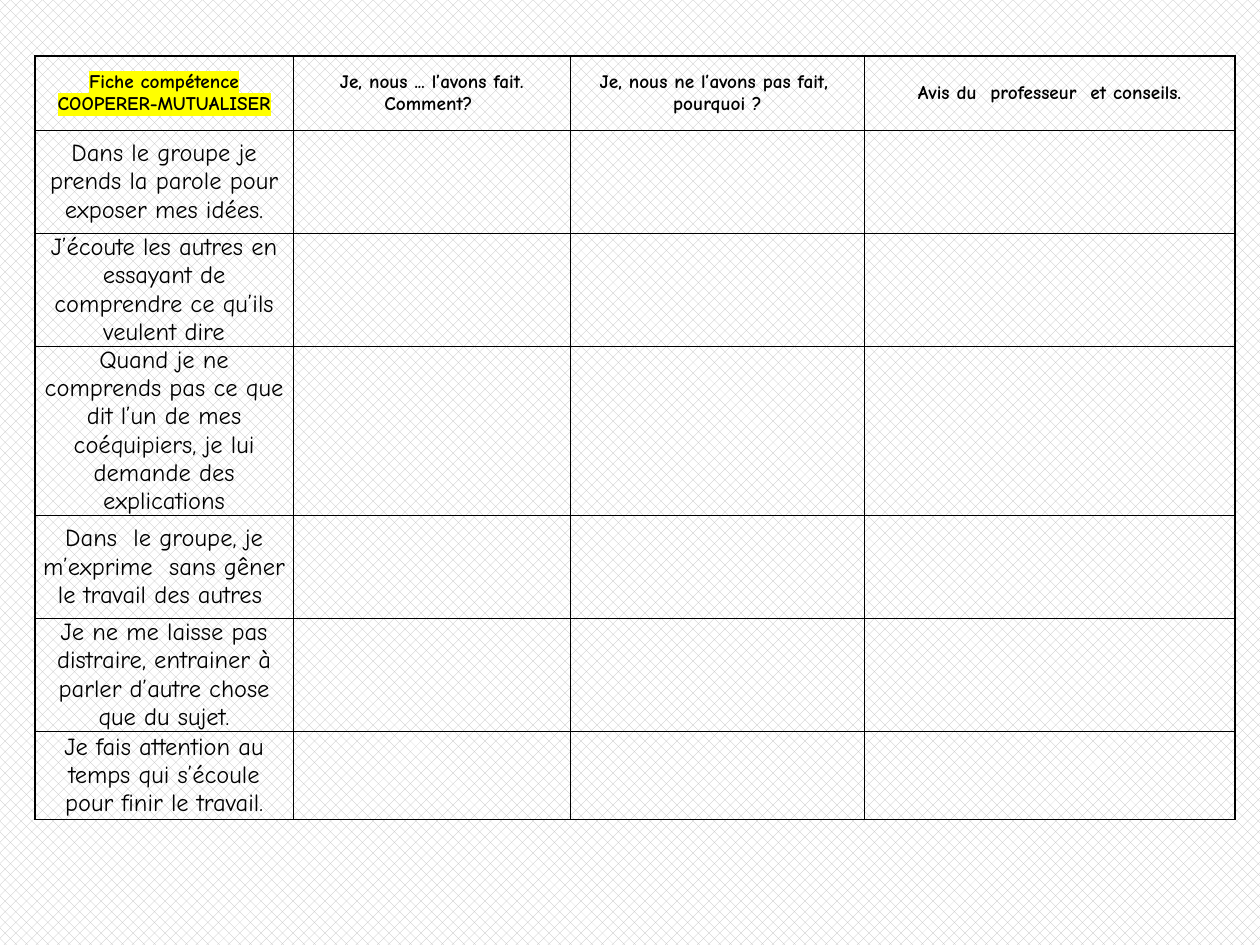
from lxml.etree import SubElement
from pptx import Presentation
from pptx.dml.color import RGBColor
from pptx.enum.dml import MSO_PATTERN
from pptx.enum.text import MSO_ANCHOR, PP_ALIGN
from pptx.oxml import parse_xml
from pptx.oxml.ns import nsdecls, qn
from pptx.util import Pt

FONT = "Comic Neue"
COLS = [147.6, 158.4, 168, 211.8]
ROWS = [42.5] + [59] * 5 + [50.4]
HEADERS = [
    "Fiche compétence COOPERER-MUTUALISER",
    "Je, nous ... l’avons fait. Comment? ",
    "Je, nous ne l’avons pas fait,  pourquoi ?",
    "Avis du  professeur  et conseils.",
]
SKILLS = [
    "Dans le groupe je prends la parole pour exposer mes idées.",
    "J’écoute les autres en essayant de comprendre ce qu’ils veulent dire",
    "Quand je ne comprends pas ce que dit l’un de mes coéquipiers, je lui demande des explications",
    "Dans  le groupe, je m’exprime  sans gêner le travail des autres ",
    "Je ne me laisse pas distraire, entrainer à parler d’autre chose que du sujet.",
    "Je fais attention au temps qui s’écoule pour finir le travail.",
]
HEADER_FONT = {"name": FONT, "size": Pt(11), "bold": True}
SKILL_FONT = {"name": FONT, "size": Pt(14), "bold": False}
CELL_FORMAT = {
    "margin_left": Pt(3.6),
    "margin_right": Pt(3.6),
    "margin_top": Pt(0),
    "margin_bottom": Pt(0),
    "vertical_anchor": MSO_ANCHOR.MIDDLE,
}


def color(value):
    return RGBColor.from_string(value)


def apply(obj, values):
    for name, value in values.items():
        setattr(obj, name, value)


def set_background(s):
    fill = s.background.fill
    fill.patterned()
    fill.pattern = MSO_PATTERN.from_xml("pct40")
    fill.fore_color.rgb = color("BFBFBF")
    fill.back_color.rgb = color("FFFFFF")


def set_borders(cell):
    tcPr = cell._tc.get_or_add_tcPr()
    for i, side in enumerate("LRTB"):
        tcPr.insert(i, parse_xml(
            f'<a:ln{side} {nsdecls("a")} w="{Pt(1)}"><a:solidFill>'
            f'<a:srgbClr val="000000"/></a:solidFill></a:ln{side}>'))


def highlight(r, value):
    mark = SubElement(r.font._element, qn("a:highlight"))
    SubElement(mark, qn("a:srgbClr"), val=value)
    r.font._element.find(qn("a:latin")).addprevious(mark)


def add_text(cell, text, font):
    p = cell.text_frame.paragraphs[0]
    p.alignment = PP_ALIGN.CENTER
    r = p.add_run()
    r.text = text
    apply(r.font, font)
    r.font.color.rgb = color("000000")
    return r


def add_grid(s, left, top):
    frame = s.shapes.add_table(len(ROWS), len(COLS), Pt(left), Pt(top),
                               Pt(sum(COLS)), Pt(sum(ROWS)))
    table = frame.table
    apply(table, {"first_row": False, "horz_banding": False})
    for column, width in zip(table.columns, COLS):
        column.width = Pt(width)
    for row, height in zip(table.rows, ROWS):
        row.height = Pt(height)
    for cell in table.iter_cells():
        apply(cell, CELL_FORMAT)
        cell.fill.background()
        set_borders(cell)
    return table


def main():
    prs = Presentation()
    prs.slide_width, prs.slide_height = Pt(720), Pt(540)
    s = prs.slides.add_slide(prs.slide_layouts[6])
    set_background(s)
    table = add_grid(s, 20, 32)
    titles = [add_text(table.cell(0, i), text, HEADER_FONT)
              for i, text in enumerate(HEADERS)]
    highlight(titles[0], "FFFF00")
    for i, text in enumerate(SKILLS, 1):
        add_text(table.cell(i, 0), text, SKILL_FONT)
    prs.save("out.pptx")


if __name__ == "__main__":
    main()
